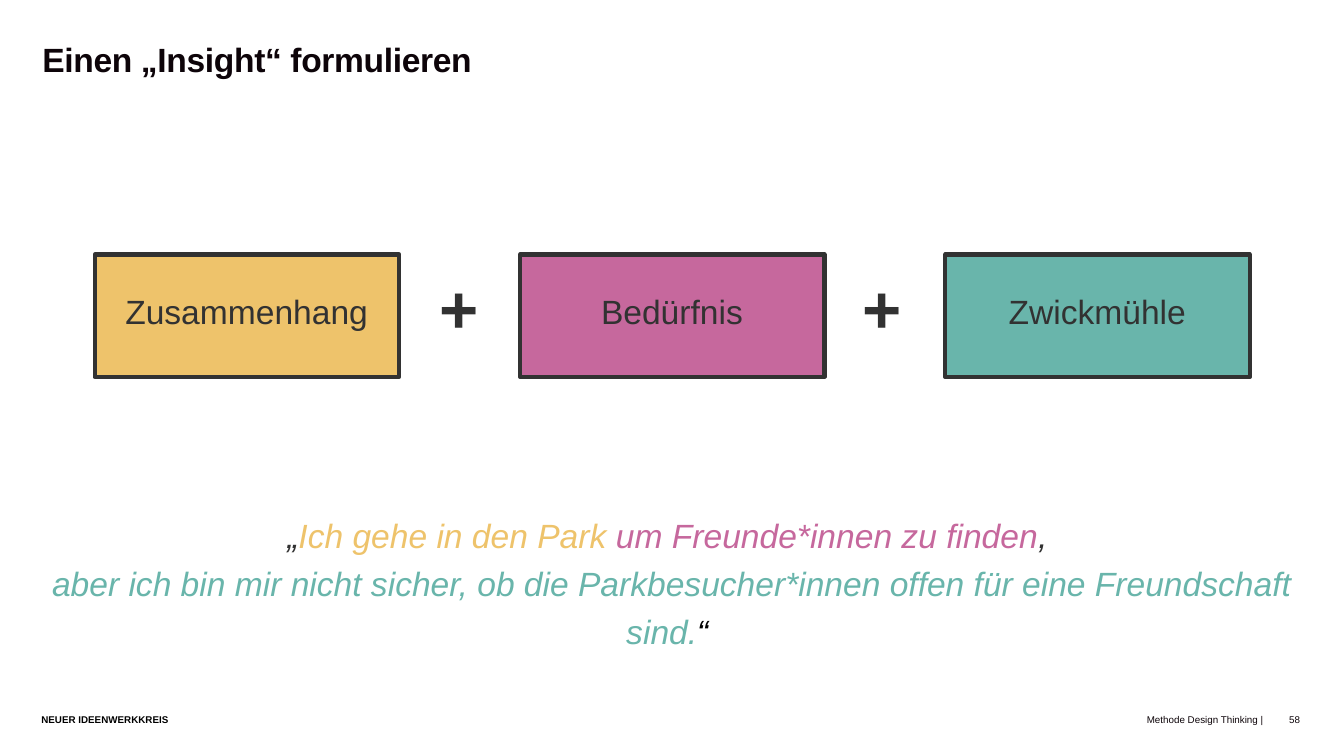
import pptx
import pptx.util
from pptx.dml.color import RGBColor
from pptx.enum.shapes import MSO_SHAPE
from pptx.enum.text import MSO_AUTO_SIZE, PP_ALIGN

PX = 9144  # EMU per px, 100 px to the inch
FONT = "Arial"
INK = RGBColor(0x0D, 0x04, 0x09)
BLACK = RGBColor(0x00, 0x00, 0x00)
CHARCOAL = RGBColor(0x32, 0x32, 0x32)
YELLOW = RGBColor(0xEE, 0xC3, 0x6B)
PINK = RGBColor(0xC6, 0x68, 0x9D)
TEAL = RGBColor(0x69, 0xB5, 0xAB)


def scaled(*lengths):
    return [pptx.util.Emu(length * PX) for length in lengths]


def add_text(slide, box, text, size=48, color=CHARCOAL, bold=False, italic=False,
             align=PP_ALIGN.LEFT, spacing=0.9, wrap=True, grow=False, tracking=None):
    """Text is a string, or a list of paragraphs made of (text, color) runs."""
    paragraphs = [[(text, color)]] if isinstance(text, str) else text
    frame = slide.shapes.add_textbox(*scaled(*box)).text_frame
    frame.margin_left = frame.margin_top = frame.margin_right = frame.margin_bottom = 0
    frame.word_wrap = wrap
    frame.auto_size = MSO_AUTO_SIZE.SHAPE_TO_FIT_TEXT if grow else MSO_AUTO_SIZE.NONE
    for index, runs in enumerate(paragraphs):
        paragraph = frame.add_paragraph() if index else frame.paragraphs[0]
        paragraph.alignment = align
        paragraph.line_spacing = spacing
        for words, run_color in runs:
            run = paragraph.add_run()
            run.text = words
            run.font.name = FONT
            run.font.size = pptx.util.Pt(size)
            run.font.bold = bold
            run.font.italic = italic
            run.font.color.rgb = run_color
            if tracking is not None:
                run.font._element.set("spc", str(tracking))


def add_title(slide, box):
    add_text(slide, box, "Einen „Insight“ formulieren", color=INK, bold=True,
             spacing=pptx.util.Pt(54), tracking=-50)


def add_formula(slide, box):
    """Three coloured parts joined by plus signs."""
    left, top, width, height = box
    part_width = 604
    pitch = (width - part_width) // 2
    parts = [("Zusammenhang", YELLOW, 483), ("Bedürfnis", PINK, 283), ("Zwickmühle", TEAL, 353)]
    for index, (label, fill, label_width) in enumerate(parts):
        part_left = left + index * pitch
        part = slide.shapes.add_shape(
            MSO_SHAPE.RECTANGLE, *scaled(part_left, top, part_width, height))
        part.shadow.inherit = False
        part.fill.solid()
        part.fill.fore_color.rgb = fill
        part.line.color.rgb = CHARCOAL
        part.line.width = pptx.util.Pt(6)
        label_left = part_left + (part_width - label_width) // 2
        add_text(slide, (label_left, top + 82, label_width, 81), label,
                 align=PP_ALIGN.CENTER, wrap=False, grow=True)
    for plus_left in (684, 1523):
        add_text(slide, (left + plus_left, top + 42, 79, 160), "+", size=96, bold=True,
                 align=PP_ALIGN.CENTER, wrap=False, grow=True)


def add_quote(slide, box):
    """Example sentence, coloured like the parts of the formula."""
    add_text(slide, box, [
        [("„", CHARCOAL), ("Ich gehe in den Park ", YELLOW),
         ("um Freunde*innen zu finden", PINK), (", ", CHARCOAL)],
        [("aber ich bin mir nicht sicher, ob die Parkbesucher*innen offen für eine "
          "Freundschaft sind.", TEAL), ("“ ", BLACK)],
    ], italic=True, align=PP_ALIGN.CENTER, spacing=1.2)


def add_footer(slide, box):
    left, top, width, height = box
    small = dict(size=14, spacing=pptx.util.Pt(16), grow=True)
    add_text(slide, (left, top, 1227, height), "NEUER IDEENWERKKREIS",
             color=BLACK, bold=True, **small)
    add_text(slide, (left + 1209, top, 1216, height), "Methode Design Thinking |",
             color=INK, align=PP_ALIGN.RIGHT, **small)
    add_text(slide, (left + width - 23, top, 23, height), "58",
             color=INK, align=PP_ALIGN.RIGHT, wrap=False, **small)


def main():
    deck = pptx.Presentation()
    deck.slide_width, deck.slide_height = scaled(2667, 1500)
    slide = deck.slides.add_slide(deck.slide_layouts[6])
    add_title(slide, (84, 83, 2501, 150))
    add_formula(slide, (188, 505, 2292, 243))
    add_quote(slide, (83, 1005, 2501, 303))
    add_footer(slide, (82, 1417, 2498, 23))
    deck.save("out.pptx")


if __name__ == "__main__":
    main()
